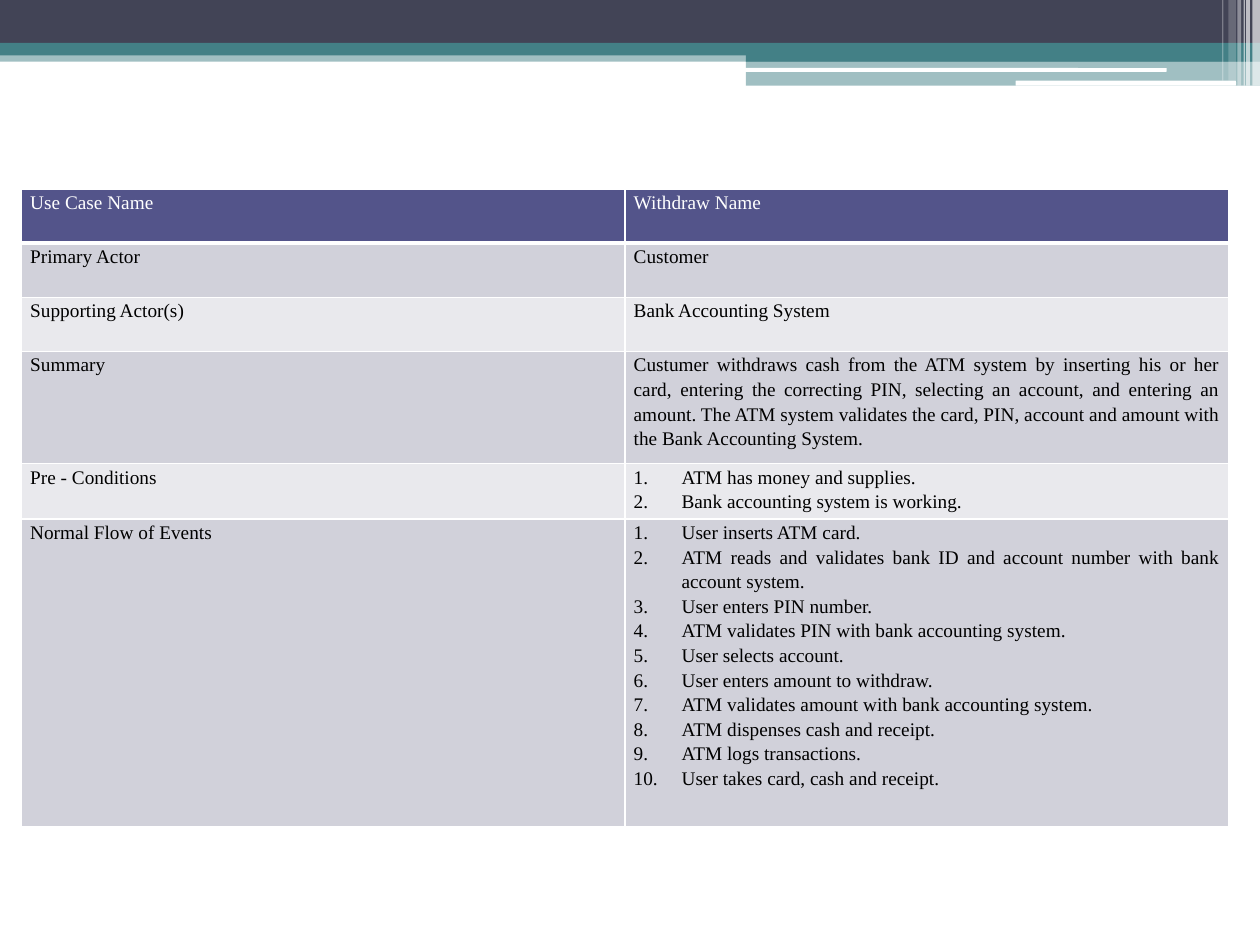
from typing import NamedTuple

from lxml import etree
from pptx import Presentation, util as u
from pptx.dml.color import RGBColor
from pptx.enum import shapes, text
from pptx.oxml import ns

WIDTH, HEIGHT = 10, 7.5
COLORS = {
    "slate": "424456",
    "teal": "438086",
    "white": "FFFFFF",
    "black": "000000",
    "header": "53548A",
    "odd": "D1D1DA",
    "even": "E9E9ED",
}
RECT = shapes.MSO_SHAPE.RECTANGLE
ROUNDED = shapes.MSO_SHAPE.ROUNDED_RECTANGLE
LIST_INDENT = u.Inches(0.38)


class Band(NamedTuple):
    left: float
    top: float
    width: float
    height: float
    color: str
    opacity: int = 100
    outline: int = RECT


class UseCaseRow(NamedTuple):
    height: float
    label: str
    content: tuple[str, ...]
    numbered: bool = False


BANDS = [
    Band(0, 0.4, WIDTH, 0.09, "teal", 50),
    Band(0, 0, WIDTH, 0.34, "slate"),
    Band(0, 0.34, WIDTH, 0.1, "teal"),
    Band(5.92, 0.39, 4.08, 0.1, "teal"),
    Band(5.92, 0.48, 4.08, 0.2, "teal", 50),
    Band(5.91, 0.54, 3.35, 0.03, "white", outline=ROUNDED),
    Band(8.06, 0.64, 1.75, 0.04, "white", outline=ROUNDED),
]
# Corner stripes: left, width, height, opacity
STRIPES = [
    (9.94, 0.06, 0.68, 65),
    (9.89, 0.03, 0.68, 65),
    (9.87, 0.01, 0.68, 60),
    (9.82, 0.03, 0.68, 40),
    (9.75, 0.06, 0.64, 20),
    (9.7, 0.01, 0.64, 30),
]
BANDS += [Band(left, 0, width, height, "white", opacity)
          for left, width, height, opacity in STRIPES]

USE_CASE = [
    UseCaseRow(0.43, "Use Case Name", ("Withdraw Name",)),
    UseCaseRow(0.43, "Primary Actor", ("Customer",)),
    UseCaseRow(0.43, "Supporting Actor(s)", ("Bank Accounting System",)),
    UseCaseRow(0.89, "Summary", (
        "Custumer withdraws cash from the ATM system by inserting his or her card, "
        "entering the correcting PIN, selecting an account, and entering an amount. "
        "The ATM system validates the card, PIN, account and amount with the "
        "Bank Accounting System.",
    )),
    UseCaseRow(0.44, "Pre - Conditions", (
        "ATM has money and supplies.",
        "Bank accounting system is working.",
    ), numbered=True),
    UseCaseRow(2.44, "Normal Flow of Events", (
        "User inserts ATM card.",
        "ATM reads and validates bank ID and account number with bank account system.",
        "User enters PIN number.",
        "ATM validates PIN with bank accounting system.",
        "User selects account.",
        "User enters amount to withdraw.",
        "ATM validates amount with bank accounting system.",
        "ATM dispenses cash and receipt.",
        "ATM logs transactions.",
        "User takes card, cash and receipt.",
    ), numbered=True),
]


def rgb(name: str) -> RGBColor:
    return RGBColor.from_string(COLORS[name])


def draw_band(slide, band: Band) -> None:
    box = [u.Inches(length) for length in band[:4]]
    shape = slide.shapes.add_shape(band.outline, *box)
    shape.shadow.inherit = False
    shape.line.fill.background()
    shape.fill.solid()
    shape.fill.fore_color.rgb = rgb(band.color)
    if band.opacity < 100:
        color = shape._element.spPr.find(".//" + ns.qn("a:srgbClr"))
        etree.SubElement(color, ns.qn("a:alpha"), val=str(band.opacity * 1000))


def set_borders(cell, bottom_width: float) -> None:
    properties = cell._tc.get_or_add_tcPr()
    for side, width in (("L", 1), ("R", 1), ("T", 1), ("B", bottom_width)):
        line = etree.SubElement(properties, ns.qn(f"a:ln{side}"), w=str(u.Pt(width)))
        fill = etree.SubElement(line, ns.qn("a:solidFill"))
        etree.SubElement(fill, ns.qn("a:srgbClr"), val=COLORS["white"])


def number_paragraph(paragraph) -> None:
    properties = paragraph._p.get_or_add_pPr()
    properties.set("marL", str(LIST_INDENT))
    properties.set("indent", str(-LIST_INDENT))
    etree.SubElement(properties, ns.qn("a:buFont"), typeface="+mj-lt")
    etree.SubElement(properties, ns.qn("a:buAutoNum"), type="arabicPeriod")


def fill_cell(cell, lines: tuple[str, ...], fill: str, ink: str,
              bottom_width: float, numbered: bool) -> None:
    set_borders(cell, bottom_width)
    cell.fill.solid()
    cell.fill.fore_color.rgb = rgb(fill)
    cell.margin_left = cell.margin_right = u.Inches(0.07)
    cell.margin_top = cell.margin_bottom = 0
    cell.text = "\n".join(lines)
    for paragraph in cell.text_frame.paragraphs:
        paragraph.alignment = text.PP_ALIGN.JUSTIFY
        paragraph.line_spacing = 1.15
        if numbered:
            number_paragraph(paragraph)
        paragraph.font.name = "Times New Roman"
        paragraph.font.size = u.Pt(11)
        paragraph.font.color.rgb = rgb(ink)


def draw_use_case(slide, rows: list[UseCaseRow]) -> None:
    total = sum(row.height for row in rows)
    table = slide.shapes.add_table(
        len(rows), 2, u.Inches(0.17), u.Inches(1.5), u.Inches(9.58), u.Inches(total)
    ).table
    for index, row in enumerate(rows):
        table.rows[index].height = u.Inches(row.height)
        if index == 0:
            fill, ink, bottom_width = "header", "white", 3
        else:
            fill, ink, bottom_width = ("odd" if index % 2 else "even"), "black", 1
        label, content = table.rows[index].cells
        fill_cell(label, (row.label,), fill, ink, bottom_width, False)
        fill_cell(content, row.content, fill, ink, bottom_width, row.numbered)


def main() -> None:
    deck = Presentation()
    deck.slide_width, deck.slide_height = u.Inches(WIDTH), u.Inches(HEIGHT)
    slide = deck.slides.add_slide(deck.slide_layouts[6])
    for band in BANDS:
        draw_band(slide, band)
    draw_use_case(slide, USE_CASE)
    deck.save("out.pptx")


if __name__ == "__main__":
    main()
